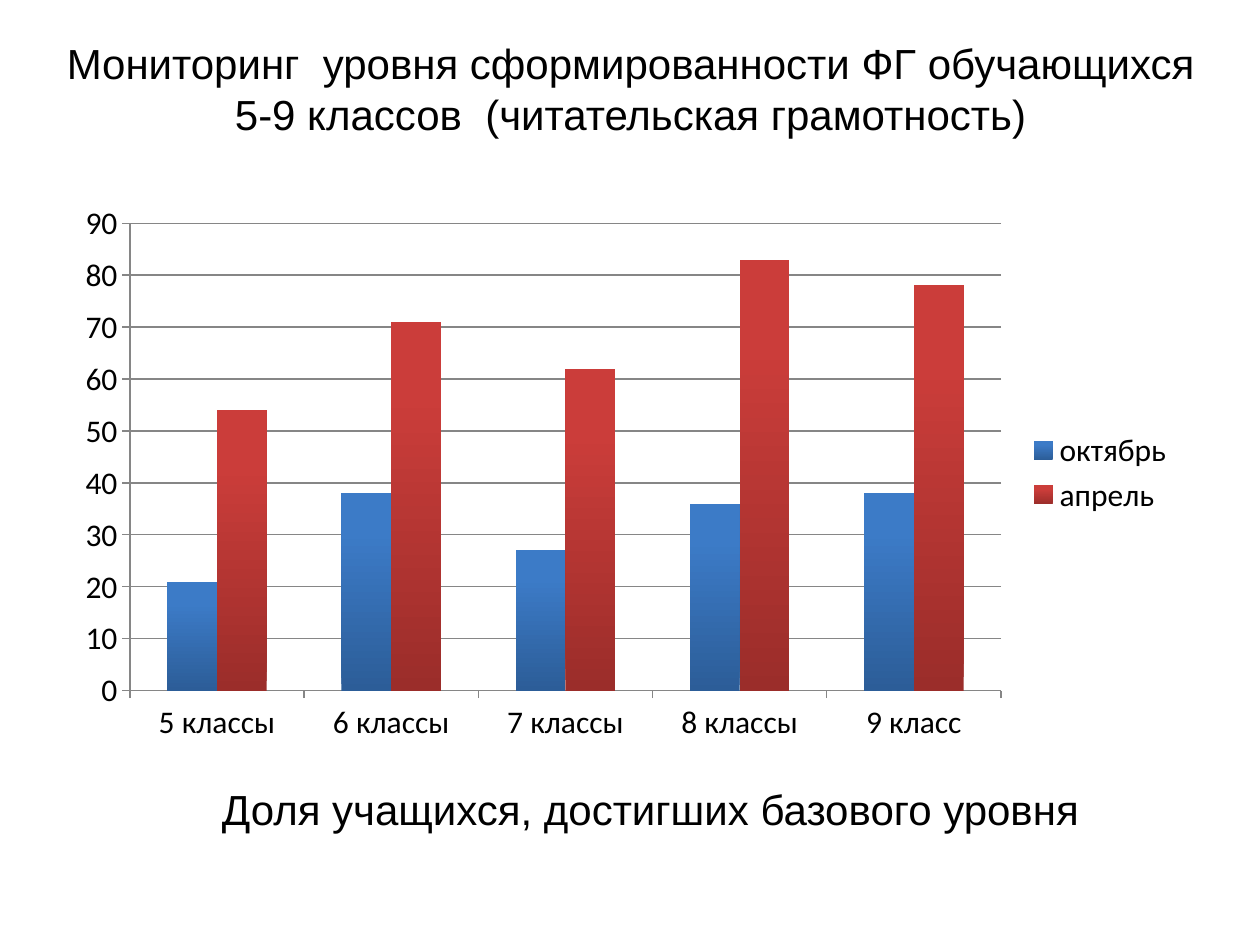
"""Build a slide comparing reading literacy in grades 5-9 in October and April."""
from pptx import Presentation
from pptx.chart.data import CategoryChartData
from pptx.dml.color import RGBColor
from pptx.enum.chart import XL_CHART_TYPE, XL_LEGEND_POSITION, XL_TICK_MARK
from pptx.enum.text import MSO_AUTO_SIZE, PP_ALIGN
from pptx.util import Cm, Pt

COLUMNS = XL_CHART_TYPE.COLUMN_CLUSTERED
RIGHT = XL_LEGEND_POSITION.RIGHT
OUTSIDE = XL_TICK_MARK.OUTSIDE
NO_TICK = XL_TICK_MARK.NONE
GROW = MSO_AUTO_SIZE.SHAPE_TO_FIT_TEXT
CENTER = PP_ALIGN.CENTER

COLORS = {
    "text": "000000",
    "axis": "868686",
    "october_dark": "2C5D98",
    "october_light": "3C7BC7",
    "april_dark": "9B2D2A",
    "april_light": "CB3D3A",
}


def color(name):
    return RGBColor.from_string(COLORS[name])


presentation = Presentation()
presentation.slide_width = Cm(25.4)
presentation.slide_height = Cm(19.05)
slide = presentation.slides.add_slide(presentation.slide_layouts[6])

captions = [
    ("Мониторинг  уровня сформированности ФГ обучающихся 5-9 классов  (читательская грамотность)",
     1.07, 0.64, 2.31),
    ("Доля учащихся, достигших базового уровня", 1.47, 15.67, 1.27),
]
for text, left, top, height in captions:
    shape = slide.shapes.add_textbox(Cm(left), Cm(top), Cm(23.29), Cm(height))
    shape.text_frame.word_wrap = True
    shape.text_frame.auto_size = GROW
    paragraph = shape.text_frame.paragraphs[0]
    paragraph.alignment = CENTER
    run = paragraph.add_run()
    run.text = text
    run.font.name = "Arial"
    run.font.size = Pt(24)
    run.font.color.rgb = color("text")

chart_data = CategoryChartData()
chart_data.categories = ["5 классы", "6 классы", "7 классы", "8 классы", "9 класс"]
chart_data.add_series("октябрь", [21, 38, 27, 36, 38])
chart_data.add_series("апрель", [54, 71, 62, 83, 78])
chart = slide.shapes.add_chart(
    COLUMNS, Cm(1.27), Cm(3.89), Cm(22.66), Cm(11.28), chart_data
).chart
chart.has_title = False
chart.font.name = "Calibri"
chart.font.size = Pt(18)
chart.font.color.rgb = color("text")
chart.has_legend = True
chart.legend.position = RIGHT
chart.legend.include_in_layout = False

value_axis = chart.value_axis
value_axis.minimum_scale = 0
value_axis.maximum_scale = 90
value_axis.major_unit = 10
value_axis.has_major_gridlines = True
gridlines = value_axis.major_gridlines
for axis in (chart.category_axis, value_axis):
    axis.major_tick_mark = OUTSIDE
    axis.minor_tick_mark = NO_TICK
for lines in (chart.category_axis, value_axis, gridlines):
    lines.format.line.color.rgb = color("axis")
    lines.format.line.width = Pt(0.75)

plot = chart.plots[0]
plot.gap_width = 150
plot.overlap = 0
plot.vary_by_categories = False
for series, month in zip(plot.series, ("october", "april")):
    series.invert_if_negative = False
    fill = series.format.fill
    fill.gradient()
    fill.gradient_angle = 90
    for stop, shade, position in zip(fill.gradient_stops, ("dark", "light"), (0, 0.8)):
        stop.color.rgb = color(f"{month}_{shade}")
        stop.position = position

presentation.save("out.pptx")
